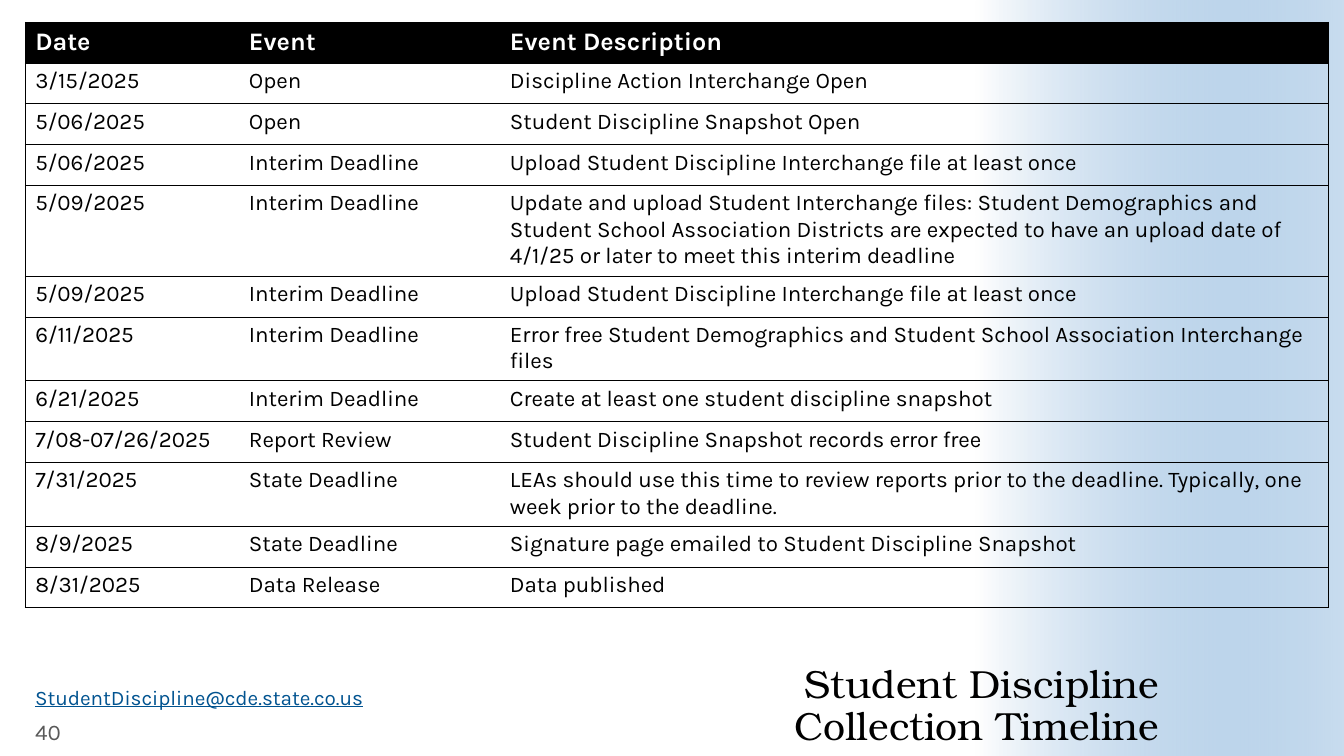
from dataclasses import dataclass

from lxml import etree
from pptx import Presentation
from pptx import util as u
from pptx.dml.color import RGBColor
from pptx.enum import shapes, text
from pptx.oxml.ns import qn

SCALE = 4572
WIDE, HIGH = 2667, 1500


@dataclass(frozen=True)
class Theme:
    """Colours, fonts and type sizes."""
    ink: str = "000000"
    paper: str = "FFFFFF"
    sky: str = "488BC9"
    link: str = "005390"
    gray: str = "595959"
    sans: str = "Karla"
    serif: str = "TeX Gyre Bonum"
    title: float = 28
    head: float = 18
    body: float = 16
    mail: float = 14.8
    rule: float = 0.5


THEME = Theme()
COLS = (424, 518, 1644)
ROW = 81
DATES = (
    ("Date", "Event", "Event Description"),
    ("3/15/2025", "Open", "Discipline Action Interchange Open"),
    ("5/06/2025", "Open", "Student Discipline Snapshot Open"),
    ("5/06/2025", "Interim Deadline", "Upload Student Discipline Interchange file at least once"),
    ("5/09/2025", "Interim Deadline",
     "Update and upload Student Interchange files: Student Demographics and Student School "
     "Association Districts are expected to have an upload date of 4/1/25 or later to meet "
     "this interim deadline"),
    ("5/09/2025", "Interim Deadline", "Upload Student Discipline Interchange file at least once"),
    ("6/11/2025", "Interim Deadline",
     "Error free Student Demographics and Student School Association Interchange files"),
    ("6/21/2025", "Interim Deadline", "Create at least one student discipline snapshot"),
    ("7/08-07/26/2025", "Report Review", "Student Discipline Snapshot records error free"),
    ("7/31/2025", "State Deadline",
     "LEAs should use this time to review reports prior to the deadline. "
     "Typically, one week prior to the deadline."),
    ("8/9/2025", "State Deadline", "Signature page emailed to Student Discipline Snapshot"),
    ("8/31/2025", "Data Release", "Data published"),
)


def px(*vals):
    """Turn px lengths into EMU."""
    return [u.Emu(val * SCALE) for val in vals]


def rgb(code):
    """Turn a hex code into a colour."""
    return RGBColor.from_string(code)


def write(par, words, size, color, face=THEME.sans, bold=False):
    """Add one styled run to a paragraph."""
    run = par.add_run()
    run.text = words
    run.font.name, run.font.size, run.font.bold = face, u.Pt(size), bold
    run.font.color.rgb = rgb(color)
    return run


def frame(slide, box, anchor, inset=(20, 10)):
    """Add a wrapping text box and return its first paragraph."""
    area = slide.shapes.add_textbox(*px(*box)).text_frame
    area.word_wrap, area.vertical_anchor = True, anchor
    area.margin_left = area.margin_right = px(inset[0])[0]
    area.margin_top = area.margin_bottom = px(inset[1])[0]
    return area.paragraphs[0]


def glow(slide, box):
    """Fade from white at the left of the box to blue at its right."""
    left, top, width, height = box
    turned = (left + (width - height) // 2, top + (height - width) // 2, height, width)
    band = slide.shapes.add_shape(shapes.MSO_SHAPE.RECTANGLE, *px(*turned))
    band.rotation = 270
    band.shadow.inherit = False
    band.line.fill.background()
    band.fill.gradient()
    band.fill.gradient_angle = 270
    for stop, color in zip(band.fill.gradient_stops, (THEME.paper, THEME.sky)):
        stop.color.rgb = rgb(color)
    last = list(band._element.iter(qn("a:srgbClr")))[-1]
    etree.SubElement(last, qn("a:alpha"), val="30000")


def edge(cell, side, shown):
    """Draw or clear one border of a cell."""
    line = etree.SubElement(cell._tc.get_or_add_tcPr(), qn("a:ln" + side),
                            w=str(u.Pt(THEME.rule)))
    if shown:
        fill = etree.SubElement(line, qn("a:solidFill"))
        etree.SubElement(fill, qn("a:srgbClr"), val=THEME.ink)
    else:
        etree.SubElement(line, qn("a:noFill"))


def dates(slide, box):
    """Place the table of dates."""
    grid = slide.shapes.add_table(len(DATES), len(COLS), *px(*box)).table
    grid.first_row = grid.horz_banding = False
    for col, width in zip(grid.columns, px(*COLS)):
        col.width = width
    for i, (row, words) in enumerate(zip(grid.rows, DATES)):
        row.height = px(ROW)[0]
        for j, (cell, word) in enumerate(zip(row.cells, words)):
            sides = {"L": j == 0, "R": j == len(COLS) - 1, "T": True, "B": True}
            for side, shown in sides.items():
                edge(cell, side, shown)
            par = cell.text_frame.paragraphs[0]
            if i == 0:
                cell.fill.solid()
                cell.fill.fore_color.rgb = rgb(THEME.ink)
                write(par, word, THEME.head, THEME.paper, bold=True)
            else:
                cell.fill.background()
                write(par, word, THEME.body, THEME.ink)


def title(slide, box):
    """Place the two-line title, set to the right."""
    par = frame(slide, box, text.MSO_ANCHOR.BOTTOM, (0, 0))
    par.alignment, par.line_spacing = text.PP_ALIGN.RIGHT, 0.9
    write(par, "Student Discipline", THEME.title, THEME.ink, THEME.serif)
    par.add_line_break()
    write(par, "Collection Timeline", THEME.title, THEME.ink, THEME.serif)


def foot(slide, box):
    """Place the mail address above the page number."""
    left, top, width, height = box
    half = height // 2
    par = frame(slide, (left, top, width, half), text.MSO_ANCHOR.TOP)
    par.line_spacing = 0.8
    mail = write(par, "StudentDiscipline@cde.state.co.us", THEME.mail, THEME.link)
    mail.font.underline = True
    par = frame(slide, (left, top + half, 170, half), text.MSO_ANCHOR.MIDDLE)
    write(par, "40", THEME.body, THEME.gray)


def main():
    """Build and save the slide."""
    deck = Presentation()
    deck.slide_width, deck.slide_height = px(WIDE, HIGH)
    slide = deck.slides.add_slide(deck.slide_layouts[6])
    glow(slide, (WIDE - 732, 0, 732, HIGH))
    title(slide, (852, 1290, 1448, 196))
    foot(slide, (50, 1358, 778, 124))
    dates(slide, (50, 44, sum(COLS), ROW * len(DATES)))
    deck.save("out.pptx")


if __name__ == "__main__":
    main()
